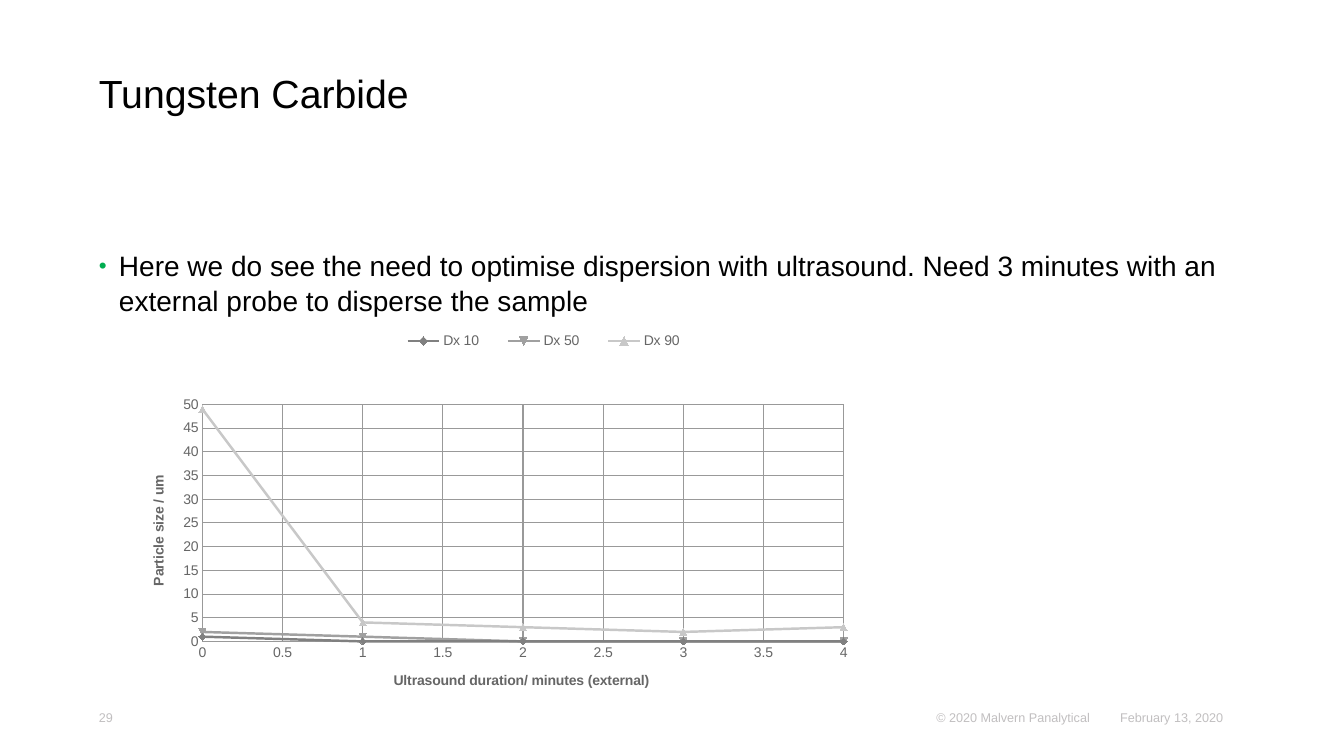
import pptx
import pptx.chart.data
import pptx.dml.color
import pptx.enum.chart
import pptx.enum.text
import pptx.oxml
import pptx.oxml.ns
import pptx.util
from dataclasses import dataclass

Inches, Pt = pptx.util.Inches, pptx.util.Pt
RGB = pptx.dml.color.RGBColor.from_string
qn = pptx.oxml.ns.qn
Align = pptx.enum.text.PP_ALIGN
Anchor = pptx.enum.text.MSO_ANCHOR


@dataclass
class Theme:
    font: str = "Arial"
    text: str = "000000"
    footer: str = "C1BFC0"
    bullet: str = "00AD50"
    chart_text: str = "666666"
    grid: str = "999999"
    series: tuple = ("808080", "A0A0A0", "C8C8C8")
    title_size: int = 28
    body_size: int = 20
    chart_size: int = 10
    footer_size: int = 9


class SlideBuilder:
    def __init__(self, slide, theme):
        self.s, self.theme = slide, theme

    def style(self, font, size, color, bold=False):
        font.name, font.size, font.bold = self.theme.font, Pt(size), bold
        font.color.rgb = RGB(color)

    def fill_text(self, sp, box, text, size, color, anchor, align=Align.LEFT, spacing=None):
        sp.left, sp.top, sp.width, sp.height = map(Inches, box)
        tf = sp.text_frame
        tf.text = text
        tf.word_wrap = True
        tf.auto_size = pptx.enum.text.MSO_AUTO_SIZE.NONE
        tf.vertical_anchor = anchor
        tf.margin_left = tf.margin_right = tf.margin_top = tf.margin_bottom = 0
        p = tf.paragraphs[0]
        p.alignment, p.line_spacing, p.space_before = align, spacing, Pt(0)
        self.style(p.runs[0].font, size, color)
        return p

    def title(self, text, box):
        t = self.theme
        self.fill_text(self.s.shapes.title, box, text, t.title_size, t.text,
                       Anchor.BOTTOM, spacing=Pt(28))

    def bullet(self, text, box):
        t = self.theme
        p = self.fill_text(self.s.placeholders[1], box, text, t.body_size, t.text,
                           Anchor.TOP, spacing=1.05)
        pPr = p._p.get_or_add_pPr()
        pPr.set("marL", str(Inches(0.2)))
        pPr.set("indent", str(-Inches(0.2)))
        ns = pptx.oxml.ns.nsdecls("a")
        for xml in (f'<a:buClr {ns}><a:srgbClr val="{t.bullet}"/></a:buClr>',
                    f'<a:buSzPct {ns} val="80000"/>',
                    f'<a:buChar {ns} char="•"/>'):
            pPr.append(pptx.oxml.parse_xml(xml))

    def footer(self, text, left, width, align=Align.LEFT):
        sp = self.s.shapes.add_textbox(0, 0, 0, 0)
        self.fill_text(sp, (left, 7.05, width, 0.14), text, self.theme.footer_size,
                       self.theme.footer, Anchor.MIDDLE, align, Pt(10))

    def place(self, element, x, y, w=None, h=None, inner=False):
        """Set the manual layout of a chart part, in fractions of the chart."""
        for old in element.findall(qn("c:layout")):
            element.remove(old)
        parts = '<c:layoutTarget val="inner"/>' if inner else ""
        parts += '<c:xMode val="edge"/><c:yMode val="edge"/>'
        for tag, value in zip("xywh", (x, y, w, h)):
            if value is not None:
                parts += f'<c:{tag} val="{value}"/>'
        layout = pptx.oxml.parse_xml(
            f'<c:layout {pptx.oxml.ns.nsdecls("c")}><c:manualLayout>{parts}'
            '</c:manualLayout></c:layout>')
        first = element[0].tag in (qn("c:tx"), qn("c:legendPos"))
        element.insert(1 if first else 0, layout)

    def axis(self, axis, title, maximum, step, title_at):
        t = self.theme
        axis.minimum_scale, axis.maximum_scale, axis.major_unit = 0, maximum, step
        axis.major_tick_mark = axis.minor_tick_mark = pptx.enum.chart.XL_TICK_MARK.NONE
        axis.has_major_gridlines = True
        for line in (axis.major_gridlines.format.line, axis.format.line):
            line.color.rgb, line.width = RGB(t.grid), Pt(0.75)
        axis.tick_labels.number_format = "General"
        axis.tick_labels.number_format_is_linked = False
        tf = axis.axis_title.text_frame
        tf.text = title
        self.style(tf.paragraphs[0].runs[0].font, t.chart_size, t.chart_text, True)
        self.place(axis.axis_title._element, *title_at)

    def scatter(self, box, x_values, series):
        t = self.theme
        data = pptx.chart.data.XyChartData()
        for name, values in series.items():
            points = data.add_series(name)
            for x, y in zip(x_values, values):
                points.add_data_point(x, y)
        chart = self.s.shapes.add_chart(
            pptx.enum.chart.XL_CHART_TYPE.XY_SCATTER_LINES, *map(Inches, box), data).chart
        chart.has_title = False
        self.style(chart.font, t.chart_size, t.chart_text)
        plot = chart.plots[0]
        plot.vary_by_categories = False
        for i, (ser, color) in enumerate(zip(plot.series, t.series), 1):
            # The series index picks the automatic marker: diamond, then triangles
            ser._element.find(qn("c:idx")).set("val", str(i))
            ser.smooth = False
            ser.format.line.color.rgb, ser.format.line.width = RGB(color), Pt(1.75)
        chart.has_legend = True
        chart.legend.position = pptx.enum.chart.XL_LEGEND_POSITION.BOTTOM
        chart.legend.include_in_layout = False
        self.place(chart.legend._element, 0.32, 0.05, 0.42, 0.07)
        self.place(chart._chartSpace.chart.plotArea, 0.083, 0.251, 0.84, 0.619, True)
        return chart


def main():
    prs = pptx.Presentation()
    prs.slide_width, prs.slide_height = Inches(13.33), Inches(7.5)
    page = SlideBuilder(prs.slides.add_slide(prs.slide_layouts[1]), Theme())

    # Title and finding
    page.title("Tungsten Carbide", (0.98, 0.76, 7.3, 0.39))
    page.bullet("Here we do see the need to optimise dispersion with ultrasound. "
                "Need 3 minutes with an external probe to disperse the sample",
                (0.98, 2.45, 11.2, 4.2))

    # Particle size against ultrasound duration
    chart = page.scatter((1.38, 3.06, 7.57, 3.81), range(5), {
        "Dx 10": (1, 0, 0, 0, 0),
        "Dx 50": (2, 1, 0, 0, 0),
        "Dx 90": (49, 4, 3, 2, 3),
    })
    page.axis(chart.category_axis, "Ultrasound duration/ minutes (external)", 4, 0.5,
              (0.33, 0.94))
    page.axis(chart.value_axis, "Particle size / um", 50, 5, (0.01, 0.43))

    # Footer
    page.footer("29", 0.98, 0.39)
    page.footer("© 2020 Malvern Panalytical", 8.68, 2.13, Align.RIGHT)
    page.footer("February 13, 2020", 11.11, 2.2)

    prs.save("out.pptx")


if __name__ == "__main__":
    main()
